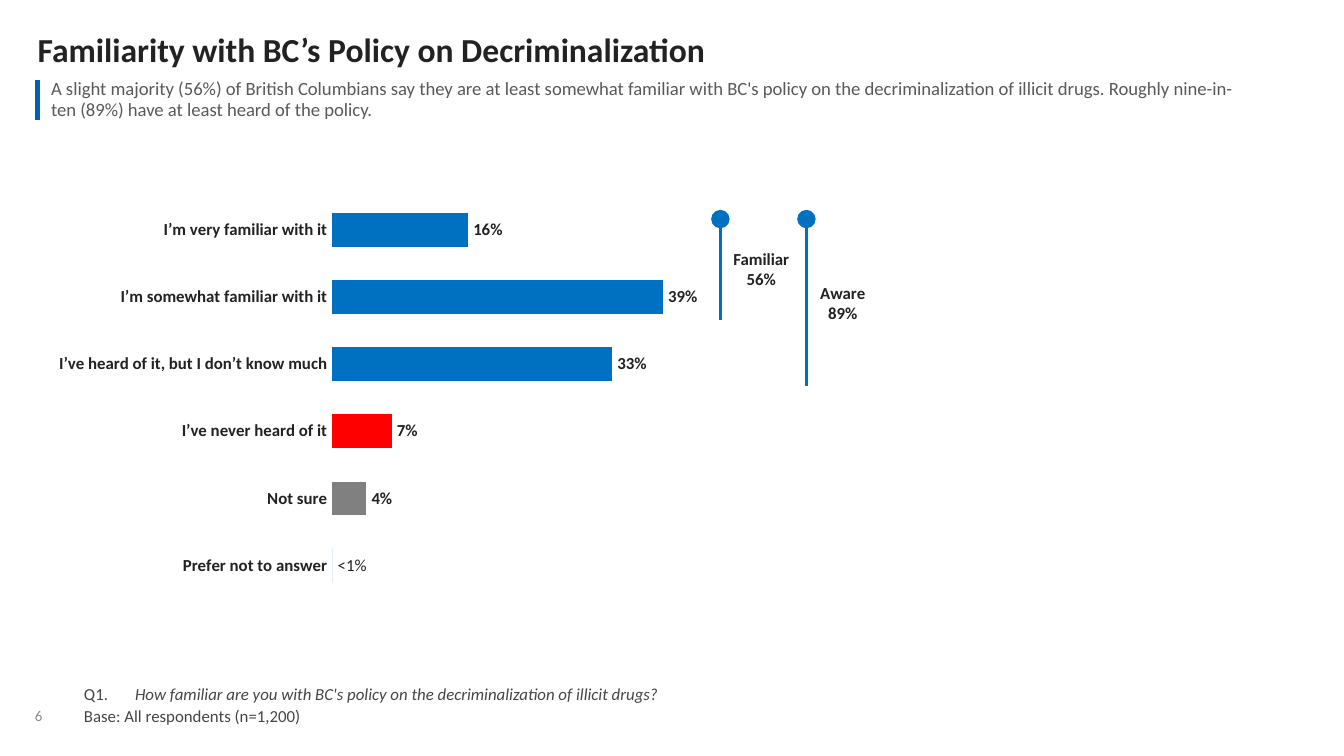
from typing import NamedTuple

from lxml.etree import SubElement
from pptx import Presentation
from pptx.chart.data import CategoryChartData
from pptx.dml.color import RGBColor
from pptx.enum.chart import XL_CHART_TYPE as CHART, XL_LABEL_POSITION as LABEL_POS, XL_TICK_MARK as TICK
from pptx.enum.chart import XL_TICK_LABEL_POSITION as TICK_POS
from pptx.enum.shapes import MSO_CONNECTOR as CONNECTOR
from pptx.enum.text import MSO_ANCHOR as ANCHOR, PP_ALIGN as ALIGN
from pptx.oxml import parse_xml
from pptx.oxml.ns import nsdecls, qn
from pptx.util import Emu, Inches, Pt

COLORS = {
    "title": "222223", "lead": "58595B", "note": "444647", "page": "888B8D",
    "rule": "0161AB", "white": "FFFFFF",
    "aware": "0070C0", "never": "FF0000", "unsure": "808080",
}
FONT = "Calibri"
WIDTH = Inches(10)
HEIGHT = Emu(WIDTH * 9 // 16)
CELL = WIDTH / 100  # the slide is a grid of 100 columns


class Box(NamedTuple):
    col: float
    row: float
    cols: float
    rows: float


class Run(NamedTuple):
    text: str
    fmt: dict


class Bar(NamedTuple):
    label: str
    value: float
    color: str


class Bracket(NamedTuple):
    col: float
    rows: float
    label: Box
    lines: tuple


BARS = [
    Bar("I’m very familiar with it", 0.16, "aware"),
    Bar("I’m somewhat familiar with it", 0.39, "aware"),
    Bar("I’ve heard of it, but I don’t know much", 0.33, "aware"),
    Bar("I’ve never heard of it", 0.07, "never"),
    Bar("Not sure", 0.04, "unsure"),
    Bar("Prefer not to answer", 0, "aware"),
]
BRACKET_TOP = 16.3
BRACKETS = [
    Bracket(53.6, 7.5, Box(54.3, 18.3, 4.7, 3.4), ("Familiar", "56%")),
    Bracket(60, 12.45, Box(60.8, 20.8, 3.8, 3.4), ("Aware", "89%")),
]


def grid(n: float) -> Emu:
    return Emu(round(n * CELL))


def rgb(name: str) -> RGBColor:
    return RGBColor.from_string(COLORS[name])


def style_font(font, size: float, color: str, **flags) -> None:
    for key, value in {"name": FONT, "size": Pt(size), **flags}.items():
        setattr(font, key, value)
    font.color.rgb = rgb(color)


def fill_paragraph(p, runs: list, **fmt) -> None:
    for key, value in fmt.items():
        setattr(p, key, value)
    for run in runs:
        r = p.add_run()
        r.text = run.text
        style_font(r.font, **run.fmt)


def add_text(slide, box: Box, paragraphs: list, anchor=ANCHOR.TOP, wrap=True,
             inset: float = 0, hang: float = 0, **fmt) -> None:
    tf = slide.shapes.add_textbox(*map(grid, box)).text_frame
    margins = {f"margin_{side}": Inches(inset) for side in ("left", "top", "right", "bottom")}
    for key, value in {"word_wrap": wrap, "vertical_anchor": anchor, **margins}.items():
        setattr(tf, key, value)
    for i, runs in enumerate(paragraphs):
        p = tf.add_paragraph() if i else tf.paragraphs[0]
        if hang:
            pPr = p._p.get_or_add_pPr()
            pPr.set("marL", str(Inches(hang)))
            pPr.set("indent", str(-Inches(hang)))
        fill_paragraph(p, runs, **fmt)


def add_lead(slide, box: Box, text: str) -> None:
    frame = slide.shapes.add_table(1, 1, *map(grid, box))
    table = frame.table
    table.first_row = table.horz_banding = False
    cell = table.cell(0, 0)
    cell_format = {"margin_left": Inches(0.1), "margin_right": Inches(0.1), "margin_top": 0,
                   "margin_bottom": 0, "vertical_anchor": ANCHOR.MIDDLE}
    for key, value in cell_format.items():
        setattr(cell, key, value)
    fill_paragraph(cell.text_frame.paragraphs[0], [Run(text, {"size": 10, "color": "lead"})],
                   line_spacing=0.9, space_after=Pt(3))
    # Coloured rule on the left, the other borders unseen
    tcPr = cell._tc.get_or_add_tcPr()
    for tag, color, width in (("lnL", "rule", 3), ("lnR", "white", 1), ("lnT", None, 0), ("lnB", None, 0)):
        ln = SubElement(tcPr, qn(f"a:{tag}"), w=str(Pt(width)))
        if color:
            SubElement(SubElement(ln, qn("a:solidFill")), qn("a:srgbClr"), val=COLORS[color])
        else:
            SubElement(ln, qn("a:noFill"))
    cell.fill.background()


def add_bar_chart(slide, box: Box, bars: list) -> None:
    data = CategoryChartData(number_format="0%")
    data.categories = [bar.label for bar in bars]
    data.add_series("Series 1", [bar.value for bar in bars])
    chart = slide.shapes.add_chart(CHART.BAR_CLUSTERED, *map(grid, box), data).chart
    chart.has_legend = chart.has_title = False
    style_font(chart.font, 9, "title", bold=True)

    # Axes
    axis_formats = {
        chart.category_axis: {"reverse_order": True},
        chart.value_axis: {"minimum_scale": 0, "maximum_scale": 1, "major_unit": 0.2,
                           "has_major_gridlines": False, "tick_label_position": TICK_POS.NONE},
    }
    for axis, fmt in axis_formats.items():
        for key, value in {"major_tick_mark": TICK.NONE, "minor_tick_mark": TICK.NONE, **fmt}.items():
            setattr(axis, key, value)
        axis.format.line.fill.background()

    # Bars and their labels
    plot = chart.plots[0]
    plot.gap_width, plot.vary_by_categories = 100, False
    series = plot.series[0]
    series.format.fill.solid()
    series.format.fill.fore_color.rgb = rgb("aware")
    for i, bar in enumerate(bars):
        if bar.color != "aware":
            fill = series.points[i].format.fill
            fill.solid()
            fill.fore_color.rgb = rgb(bar.color)
    labels = series.data_labels
    label_format = {"show_value": True, "number_format": "0%", "number_format_is_linked": False,
                    "position": LABEL_POS.OUTSIDE_END}
    for key, value in label_format.items():
        setattr(labels, key, value)
    style_font(labels.font, 9, "title", bold=True)
    small = series.points[len(bars) - 1].data_label
    fill_paragraph(small.text_frame.paragraphs[0],
                   [Run("<1%", {"size": 9, "color": "title", "bold": False})])
    small.position = LABEL_POS.OUTSIDE_END

    # Fixed plot area, so that the category labels keep their room
    area = chart._chartSpace.chart.plotArea
    for old in area.findall(qn("c:layout")):
        area.remove(old)
    places = {"layoutTarget": "inner", "xMode": "edge", "yMode": "edge",
              "x": 0.258, "y": 0, "w": 0.742, "h": 1}
    parts = "".join(f'<c:{tag} val="{value}"/>' for tag, value in places.items())
    area.insert(0, parse_xml(f'<c:layout {nsdecls("c")}><c:manualLayout>{parts}</c:manualLayout></c:layout>'))


def add_bracket(slide, bracket: Bracket) -> None:
    x, top = grid(bracket.col), grid(BRACKET_TOP)
    line = slide.shapes.add_connector(CONNECTOR.STRAIGHT, x, top, x, top + grid(bracket.rows))
    line.line.width = Pt(1.5)
    line.line.color.rgb = rgb("aware")
    SubElement(line.line._get_or_add_ln(), qn("a:headEnd"), type="oval", w="lg", len="lg")
    SubElement(line._element.spPr, qn("a:effectLst"))
    fmt = {"size": 9, "color": "title", "bold": True}
    add_text(slide, bracket.label, [[Run(text, fmt)] for text in bracket.lines],
             wrap=False, inset=0.02, alignment=ALIGN.CENTER)


def main() -> None:
    prs = Presentation()
    prs.slide_width, prs.slide_height = WIDTH, HEIGHT
    slide = prs.slides.add_slide(prs.slide_layouts[6])

    # Heading
    add_text(slide, Box(2.8, 2.5, 94.6, 2.7),
             [[Run("Familiarity with BC’s Policy on Decriminalization",
                   {"size": 18, "color": "title", "bold": True})]], line_spacing=0.9)
    add_lead(slide, Box(2.8, 5.93, 90, 3),
             "A slight majority (56%) of British Columbians say they are at least somewhat familiar with "
             "BC's policy on the decriminalization of illicit drugs. Roughly nine-in-ten (89%) have at "
             "least heard of the policy.")

    # Chart with its brackets
    add_bar_chart(slide, Box(2.8, 14.6, 85, 30), BARS)
    for bracket in BRACKETS:
        add_bracket(slide, bracket)

    # Footer
    note = {"size": 9, "color": "note"}
    question = "How familiar are you with BC's policy on the decriminalization of illicit drugs?"
    add_text(slide, Box(6.25, 50.95, 84, 3.1),
             [[Run("Q1.\t", note), Run(question, {**note, "italic": True})],
              [Run("Base: All respondents (n=1,200)", note)]],
             anchor=ANCHOR.BOTTOM, hang=0.38, line_spacing=0.9, space_after=Pt(2))
    add_text(slide, Box(2.6, 51.3, 3.4, 2.6), [[Run("6", {"size": 8, "color": "page"})]],
             anchor=ANCHOR.BOTTOM, line_spacing=0.85)

    prs.save("out.pptx")


if __name__ == "__main__":
    main()
